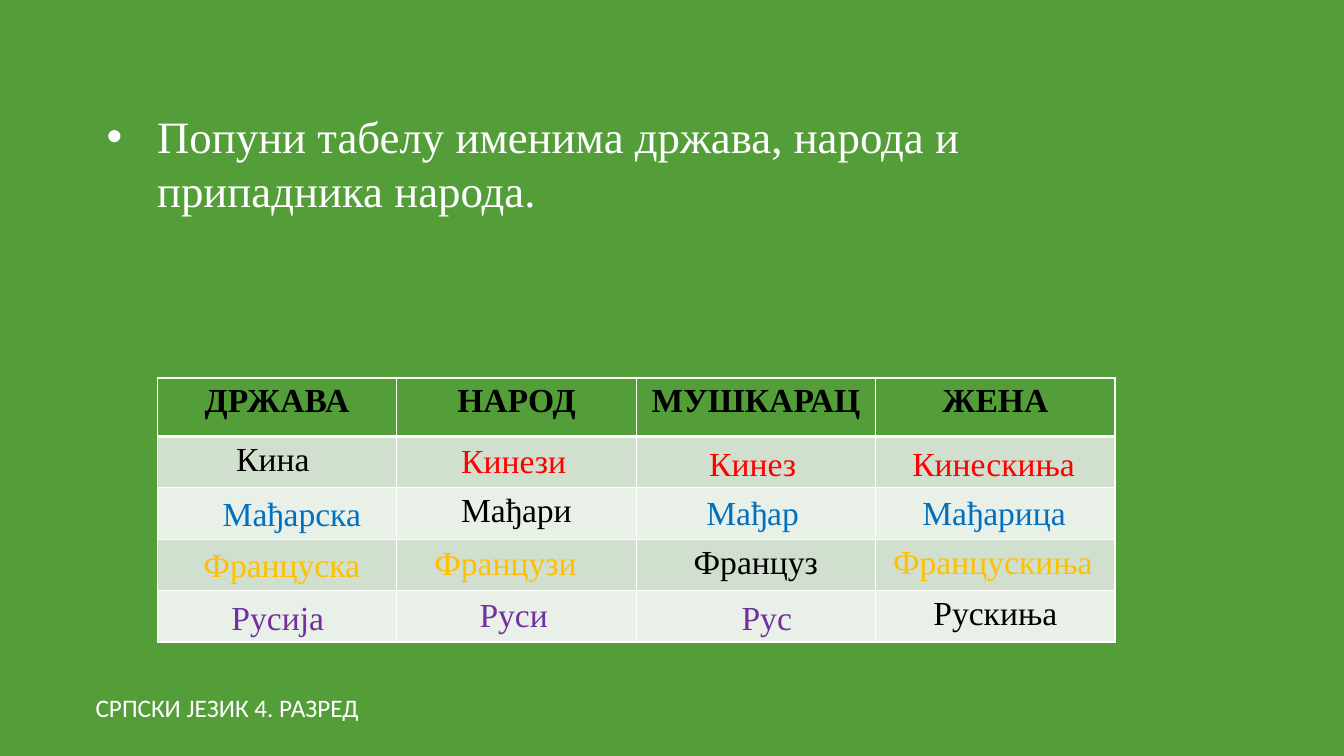
from dataclasses import dataclass

from lxml.etree import SubElement
from pptx import Presentation
from pptx.dml.color import RGBColor
from pptx.enum.text import MSO_AUTO_SIZE, PP_ALIGN
from pptx.oxml import parse_xml
from pptx.oxml.ns import nsdecls, qn
from pptx.util import Emu, Pt

SCALE = 9144  # EMU in one px, 100 px to the inch


@dataclass(frozen=True)
class Theme:
    green: str = "549E39"
    white: str = "FFFFFF"
    black: str = "000000"
    bands: tuple = ("D1DFCE", "E9F0E8")
    red: str = "FF0000"
    blue: str = "0070C0"
    gold: str = "FFC000"
    purple: str = "7030A0"
    serif: str = "Times New Roman"
    sans: str = "Calibri"
    task_size: int = 32
    table_size: int = 24
    footer_size: int = 18


THEME = Theme()

HEADINGS = ("ДРЖАВА", "НАРОД", "МУШКАРАЦ", "ЖЕНА")
# The given words run down the diagonal of the table
GIVEN_WORDS = ("Кина ", "Мађари", "Француз", "Рускиња")
# Colour, alignment and (word, left, top, width) of each row of answers, from the table corner
ANSWERS = (
    (THEME.red, PP_ALIGN.CENTER,
     (("Кинези", 291, 57, 125), ("Кинез", 537, 59, 107), ("Кинескиња", 738, 59, 183))),
    (THEME.blue, PP_ALIGN.CENTER,
     (("Мађарска", 54, 109, 159), ("Мађар", 534, 108, 113), ("Мађарица", 748, 108, 164))),
    (THEME.gold, PP_ALIGN.LEFT,
     (("Француска", 36, 160, 177), ("Французи", 265, 158, 163), ("Францускиња", 720, 157, 220))),
    (THEME.purple, PP_ALIGN.CENTER,
     (("Русија", 63, 212, 113), ("Руси", 309, 209, 89), ("Рус", 569, 212, 71))),
)


def px(length):
    return Emu(int(length * SCALE))


def style_paragraph(para, size, color, font=THEME.serif, bold=False, align=PP_ALIGN.LEFT):
    para.alignment = align
    para.font.size = Pt(size)
    para.font.name = font
    para.font.bold = bold
    para.font.color.rgb = RGBColor.from_string(color)


def add_text(page, box, text, wrap=False, **style):
    frame = page.shapes.add_textbox(*map(px, box)).text_frame
    frame.word_wrap = wrap
    frame.auto_size = MSO_AUTO_SIZE.SHAPE_TO_FIT_TEXT
    para = frame.paragraphs[0]
    para.text = text
    style_paragraph(para, **style)
    return para


def add_task(page, box):
    para = add_text(page, box, "Попуни табелу именима држава, народа и припадника народа.",
                    wrap=True, size=THEME.task_size, color=THEME.white)
    # Hanging bullet
    properties = para._p.get_or_add_pPr()
    properties.set("marL", str(px(50)))
    properties.set("indent", str(px(-50)))
    bullet_font = SubElement(properties, qn("a:buFont"))
    bullet_font.set("typeface", "Arial")
    bullet = SubElement(properties, qn("a:buChar"))
    bullet.set("char", "•")
    # Bullet marks come before the default run properties
    properties.append(properties.find(qn("a:defRPr")))


def set_borders(cell, widths):
    properties = cell._tc.get_or_add_tcPr()
    for index, (side, width) in enumerate(widths.items()):
        properties.insert(index, parse_xml(
            f'<a:ln{side} {nsdecls("a")} w="{Pt(width)}"><a:solidFill>'
            f'<a:srgbClr val="{THEME.white}"/></a:solidFill></a:ln{side}>'))


def add_word_table(page, box):
    row_heights = [58] + [51] * len(GIVEN_WORDS)
    table = page.shapes.add_table(len(row_heights), len(HEADINGS), *map(px, box)).table
    for column in table.columns:
        column.width = px(box[2] / len(HEADINGS))
    for row_index, (row, height) in enumerate(zip(table.rows, row_heights)):
        row.height = px(height)
        header = row_index == 0
        for column_index, cell in enumerate(row.cells):
            cell.fill.solid()
            fill = THEME.green if header else THEME.bands[(row_index - 1) % 2]
            cell.fill.fore_color.rgb = RGBColor.from_string(fill)
            # A thick line parts the heading from the body
            set_borders(cell, {"L": 1, "R": 1, "T": 3 if row_index == 1 else 1,
                               "B": 3 if header else 1})
            para = cell.text_frame.paragraphs[0]
            if header:
                para.text = HEADINGS[column_index]
            elif column_index == row_index - 1:
                para.text = GIVEN_WORDS[column_index]
            style_paragraph(para, THEME.table_size, THEME.black,
                            bold=header, align=PP_ALIGN.CENTER)


def add_answers(page, box):
    for color, align, words in ANSWERS:
        for word, left, top, width in words:
            add_text(page, (box[0] + left, box[1] + top, width, 50), word,
                     size=THEME.table_size, color=color, align=align)


def add_footer(page, box):
    add_text(page, box, "СРПСКИ ЈЕЗИК 4. РАЗРЕД",
             size=THEME.footer_size, color=THEME.white, font=THEME.sans)


def build_exercise(deck):
    page = deck.slides.add_slide(deck.slide_layouts[6])
    page.background.fill.solid()
    page.background.fill.fore_color.rgb = RGBColor.from_string(THEME.green)
    table_box = (156, 375, 950, 262)
    add_task(page, (96, 103, 1049, 118))
    add_word_table(page, table_box)
    add_answers(page, table_box)
    add_footer(page, (85, 682, 284, 40))


def main():
    deck = Presentation()
    deck.slide_width, deck.slide_height = px(1333), px(750)
    build_exercise(deck)
    deck.save("out.pptx")


if __name__ == "__main__":
    main()
